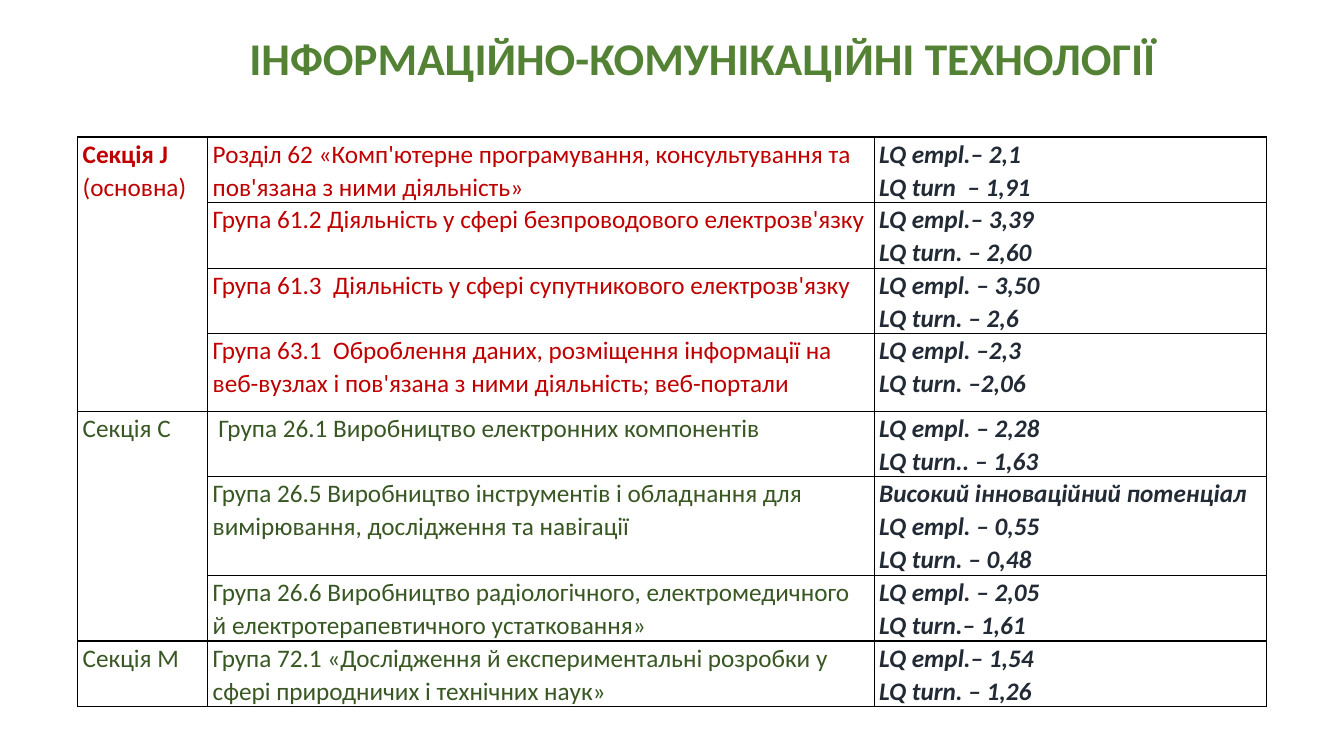
"""Build a slide with a table of ICT sectors and their location quotients."""
from lxml import etree
from pptx import Presentation
from pptx.dml.color import RGBColor
from pptx.enum.text import MSO_ANCHOR as Anchor, PP_ALIGN as Align
from pptx.oxml.ns import qn
from pptx.util import Inches, Pt

TITLE = "ІНФОРМАЦІЙНО-КОМУНІКАЦІЙНІ ТЕХНОЛОГІЇ"
TITLE_GREEN = RGBColor(0x54, 0x82, 0x35)
RED = RGBColor(0xC0, 0x00, 0x00)
GREEN = RGBColor(0x38, 0x57, 0x23)
NAVY = RGBColor(0x22, 0x2A, 0x35)
BORDER_HEX = "000000"

SECTIONS = [
    (["Секція J", "(основна)"], RED, [
        ("Розділ 62 «Комп'ютерне програмування, консультування та пов'язана з ними діяльність»",
         ["LQ empl.– 2,1", "LQ turn  – 1,91"], 0.65),
        ("Група 61.2 Діяльність у сфері безпроводового електрозв'язку",
         ["LQ empl.– 3,39", "LQ turn. – 2,60"], 0.65),
        ("Група 61.3  Діяльність у сфері супутникового електрозв'язку",
         ["LQ empl. – 3,50", "LQ turn. – 2,6"], 0.65),
        ("Група 63.1  Оброблення даних, розміщення інформації на веб-вузлах "
         "і пов'язана з ними діяльність; веб-портали",
         ["LQ empl. –2,3", "LQ turn. –2,06"], 0.77),
    ]),
    (["Cекція С"], GREEN, [
        (" Група 26.1 Виробництво електронних компонентів",
         ["LQ empl. – 2,28", "LQ turn.. – 1,63"], 0.65),
        ("Група 26.5 Виробництво інструментів і обладнання для вимірювання, "
         "дослідження та навігації",
         ["Високий інноваційний потенціал", "LQ empl. – 0,55", "LQ turn. – 0,48"], 0.98),
        ("Група 26.6 Виробництво радіологічного, електромедичного й "
         "електротерапевтичного устатковання»",
         ["LQ empl. – 2,05", "LQ turn.– 1,61"], 0.65),
    ]),
    (["Секція М"], GREEN, [
        ("Група 72.1 «Дослідження й експериментальні розробки у сфері "
         "природничих і технічних наук»",
         ["LQ empl.– 1,54", "LQ turn. – 1,26"], 0.65),
    ]),
]
COLUMN_WIDTHS = [1.29, 6.61, 3.89]
TABLE_LEFT, TABLE_TOP = 0.77, 1.36
CELL_FORMAT = {"margin_left": Inches(0.05), "margin_right": Inches(0.05),
               "margin_top": 0, "margin_bottom": 0}
TITLE_FORMAT = {"word_wrap": True, "vertical_anchor": Anchor.MIDDLE,
                "margin_top": 0, "margin_bottom": 0}


def apply_format(target, values):
    for name, value in values.items():
        setattr(target, name, value)


def write_lines(text_frame, lines, color, spacing=1.07, align=Align.LEFT, **font_format):
    for index, line in enumerate(lines):
        paragraph = text_frame.add_paragraph() if index else text_frame.paragraphs[0]
        apply_format(paragraph, {"line_spacing": spacing, "alignment": align})
        run = paragraph.add_run()
        run.text = line
        apply_format(run.font, {"name": "Calibri", "size": Pt(18), "bold": False,
                                "italic": False, **font_format})
        run.font.color.rgb = color


def style_cell(cell):
    apply_format(cell, CELL_FORMAT)
    cell.fill.background()
    properties = cell._tc.get_or_add_tcPr()
    for position, side in enumerate(("a:lnL", "a:lnR", "a:lnT", "a:lnB")):
        line = etree.Element(qn(side), w=str(Pt(1)))
        fill = etree.SubElement(line, qn("a:solidFill"))
        etree.SubElement(fill, qn("a:srgbClr"), val=BORDER_HEX)
        properties.insert(position, line)


def add_title(slide):
    box = slide.shapes.add_textbox(Inches(0.55), Inches(0.4), Inches(12.84), Inches(0.41))
    apply_format(box.text_frame, TITLE_FORMAT)
    write_lines(box.text_frame, [TITLE], TITLE_GREEN, 0.9, Align.CENTER,
                size=Pt(32.4), bold=True)


def add_sector_table(slide):
    heights = [height for _, _, groups in SECTIONS for _, _, height in groups]
    table = slide.shapes.add_table(
        len(heights), len(COLUMN_WIDTHS), Inches(TABLE_LEFT), Inches(TABLE_TOP),
        Inches(sum(COLUMN_WIDTHS)), Inches(sum(heights))).table
    apply_format(table, {"first_row": False, "horz_banding": False})
    for column, width in zip(table.columns, COLUMN_WIDTHS):
        column.width = Inches(width)
    for row, height in zip(table.rows, heights):
        row.height = Inches(height)
    for cell in table.iter_cells():
        style_cell(cell)

    first_row = 0
    for section, color, groups in SECTIONS:
        section_cell = table.cell(first_row, 0)
        if len(groups) > 1:
            section_cell.merge(table.cell(first_row + len(groups) - 1, 0))
        write_lines(section_cell.text_frame, section, color)
        for row, (group, quotients, _) in enumerate(groups, first_row):
            write_lines(table.cell(row, 1).text_frame, [group], color)
            write_lines(table.cell(row, 2).text_frame, quotients, NAVY,
                        bold=True, italic=True)
        first_row += len(groups)
    table.cell(0, 0).text_frame.paragraphs[0].runs[0].font.bold = True
    for row in range(3):
        table.cell(row, 2).vertical_anchor = Anchor.MIDDLE


def main():
    presentation = Presentation()
    apply_format(presentation, {"slide_width": Inches(13.33), "slide_height": Inches(7.5)})
    slide = presentation.slides.add_slide(presentation.slide_layouts[6])
    add_title(slide)
    add_sector_table(slide)
    presentation.save("out.pptx")


if __name__ == "__main__":
    main()
